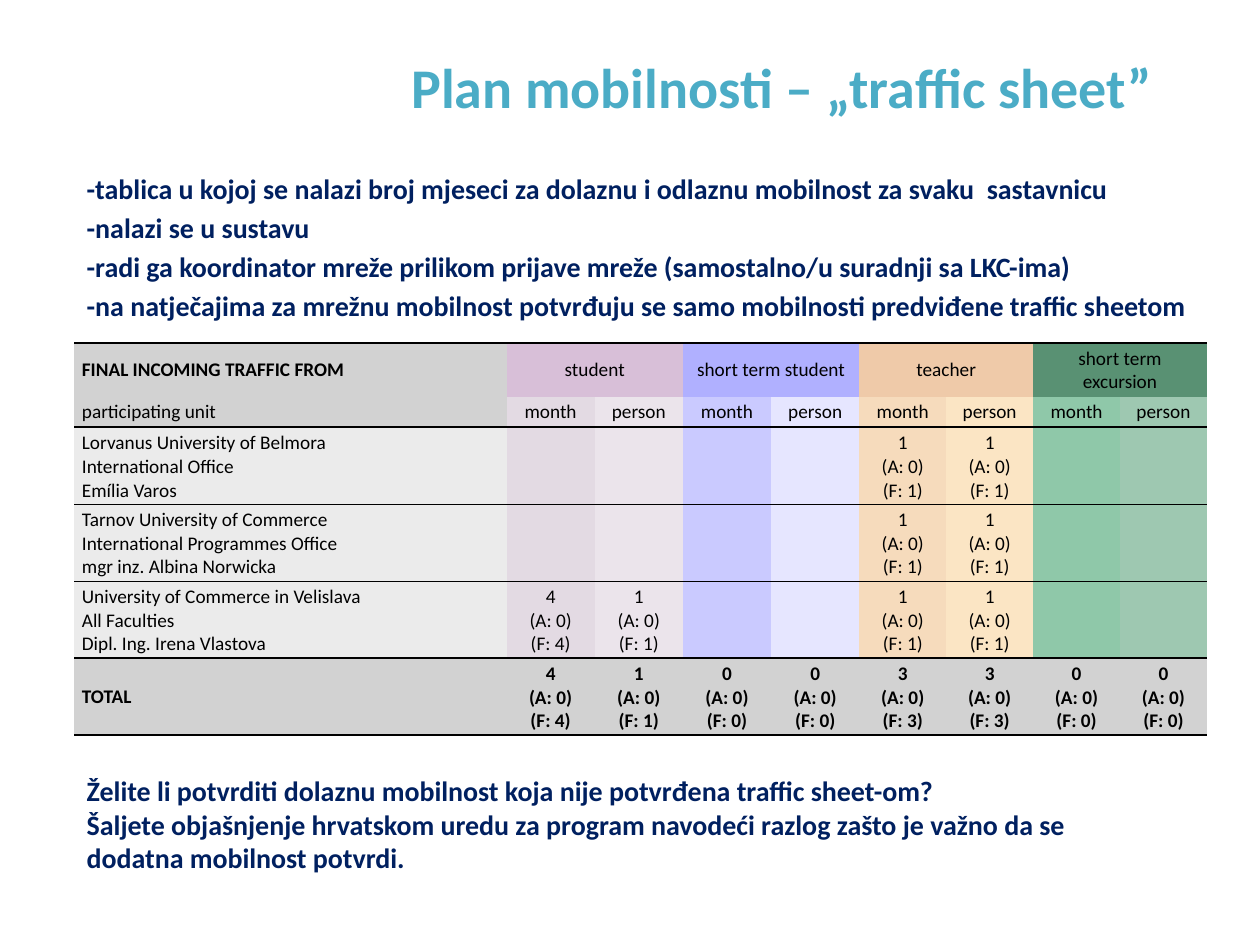
from lxml import etree
from pptx import Presentation
from pptx.dml.color import RGBColor
from pptx.enum import text
from pptx.oxml import ns
from pptx.util import Inches, Pt

FONT = "Calibri"
NAVY, TEAL, BLACK = "002060", "4BACC6", "000000"
GREY, LIGHT_GREY = "D2D2D2", "EBEBEB"
NO_STYLE = "{2D5ABB26-0587-4C30-8999-92F81FD0307C}"

INTRO = [
    "-tablica u kojoj se nalazi broj mjeseci za dolaznu i odlaznu mobilnost za svaku  sastavnicu",
    "-nalazi se u sustavu",
    "-radi ga koordinator mreže prilikom prijave mreže (samostalno/u suradnji sa LKC-ima)",
    "-na natječajima za mrežnu mobilnost potvrđuju se samo mobilnosti predviđene traffic sheetom",
]
CLOSING = [
    "Želite li potvrditi dolaznu mobilnost koja nije potvrđena traffic sheet-om?",
    "Šaljete objašnjenje hrvatskom uredu za program navodeći razlog zašto je važno "
    "da se dodatna mobilnost potvrdi.",
]

# Category, header colour, month colour, person colour
CATEGORIES = [
    ("student", "D8BFD8", "E3DAE3", "EBE4EB"),
    ("short term student", "B0B0FF", "CACAFF", "E6E6FF"),
    ("teacher", "EFCAA9", "F6DBBC", "FBE5C4"),
    ("short term excursion", "599173", "8FC8A9", "9EC8B1"),
]
# Unit lines, then month and person counts for each category (None is blank)
UNITS = [
    (["Lorvanus University of Belmora", "International Office", "Emília Varos"],
     [None, None, None, None, 1, 1, None, None]),
    (["Tarnov University of Commerce", "International Programmes Office",
      "mgr inz. Albina Norwicka"],
     [None, None, None, None, 1, 1, None, None]),
    (["University of Commerce in Velislava", "All Faculties",
      "Dipl. Ing. Irena Vlastova"],
     [4, 1, None, None, 1, 1, None, None]),
]
TOTALS = [4, 1, 0, 0, 3, 3, 0, 0]
COLUMN_WIDTHS = [3.43] + [0.7] * 4 + [0.69] * 4
ROW_HEIGHTS = [0.39, 0.23] + [0.56] * 4
RULE_WIDTHS = [1.5, None, 1.5, 0.75, 0.75, 1.5, 1.5]  # above each row, then below the last


def color(value):
    return RGBColor.from_string(value)


def add_run(paragraph, content, size, fill, bold=True):
    run = paragraph.add_run()
    run.text = content
    font = run.font
    font.name, font.size, font.bold = FONT, Pt(size), bold
    font.color.rgb = color(fill)


def add_title(slide, box):
    title = slide.shapes.title
    title.left, title.top, title.width, title.height = box
    frame = title.text_frame
    frame.vertical_anchor = text.MSO_ANCHOR.MIDDLE
    frame.margin_right = Inches(0.35)
    paragraph = frame.paragraphs[0]
    paragraph.alignment = text.PP_ALIGN.RIGHT
    add_run(paragraph, "Plan mobilnosti – „traffic sheet”", 32, TEAL)


def add_paragraphs(slide, box, lines, space_before=0):
    frame = slide.shapes.add_textbox(*box).text_frame
    frame.word_wrap = True
    for index, line in enumerate(lines):
        paragraph = frame.paragraphs[0] if index == 0 else frame.add_paragraph()
        paragraph.space_before = Pt(space_before)
        add_run(paragraph, line, 16, NAVY)


def add_rule(cell, tag, position, width):
    """Draw one horizontal cell border; borders come before the fill."""
    line = etree.Element(ns.qn(tag), w=str(Pt(width)))
    fill = etree.SubElement(line, ns.qn("a:solidFill"))
    etree.SubElement(fill, ns.qn("a:srgbClr"), val=BLACK)
    cell._tc.get_or_add_tcPr().insert(position, line)


def fill_cell(cell, lines, fill, bold=False, centered=True):
    cell.fill.solid()
    cell.fill.fore_color.rgb = color(fill)
    cell.vertical_anchor = text.MSO_ANCHOR.MIDDLE
    cell.margin_left = cell.margin_right = Inches(0.06)
    cell.margin_top = cell.margin_bottom = Inches(0.03)
    paragraph = cell.text_frame.paragraphs[0]
    paragraph.alignment = text.PP_ALIGN.CENTER if centered else text.PP_ALIGN.LEFT
    for index, line in enumerate(lines):
        if index:
            paragraph.add_line_break()
        add_run(paragraph, line, 11, BLACK, bold)


def count_lines(count):
    return [] if count is None else [str(count), "(A: 0)", f"(F: {count})"]


def add_traffic_table(slide, box):
    table = slide.shapes.add_table(len(ROW_HEIGHTS), len(COLUMN_WIDTHS), *box).table
    table.first_row = table.horz_banding = False
    table._tbl.tblPr.find(ns.qn("a:tableStyleId")).text = NO_STYLE
    for column, width in zip(table.columns, COLUMN_WIDTHS):
        column.width = Inches(width)
    for row, height in zip(table.rows, ROW_HEIGHTS):
        row.height = Inches(height)

    # Two header rows
    fill_cell(table.cell(0, 0), ["FINAL INCOMING TRAFFIC FROM"], GREY, True, False)
    fill_cell(table.cell(1, 0), ["participating unit"], GREY, centered=False)
    column_fills = []
    for index, (name, header, month, person) in enumerate(CATEGORIES):
        left = 1 + 2 * index
        table.cell(0, left).merge(table.cell(0, left + 1))
        fill_cell(table.cell(0, left), [name], header)
        fill_cell(table.cell(1, left), ["month"], month)
        fill_cell(table.cell(1, left + 1), ["person"], person)
        column_fills += [month, person]

    # Participating units
    for row, (unit, counts) in enumerate(UNITS, start=2):
        fill_cell(table.cell(row, 0), unit, LIGHT_GREY, centered=False)
        for column, (count, fill) in enumerate(zip(counts, column_fills), start=1):
            fill_cell(table.cell(row, column), count_lines(count), fill)

    # Totals
    last = len(ROW_HEIGHTS) - 1
    fill_cell(table.cell(last, 0), ["TOTAL"], GREY, True, False)
    for column, count in enumerate(TOTALS, start=1):
        fill_cell(table.cell(last, column), count_lines(count), GREY, True)

    # Horizontal rules
    for row in range(len(ROW_HEIGHTS)):
        edges = [("a:lnT", RULE_WIDTHS[row]), ("a:lnB", RULE_WIDTHS[row + 1])]
        edges = [edge for edge in edges if edge[1]]
        for column in range(len(COLUMN_WIDTHS)):
            for position, (tag, width) in enumerate(edges):
                add_rule(table.cell(row, column), tag, position, width)


def inches(*lengths):
    return [Inches(length) for length in lengths]


def main():
    presentation = Presentation()
    presentation.slide_width, presentation.slide_height = inches(10, 7.5)
    slide = presentation.slides.add_slide(presentation.slide_layouts[5])
    add_title(slide, inches(0.5, 0.3, 9, 0.77))
    add_paragraphs(slide, inches(0.59, 1.31, 9, 1.35), INTRO, space_before=3.2)
    add_traffic_table(slide, inches(0.59, 2.72, 8.98, 3.13))
    add_paragraphs(slide, inches(0.59, 6.09, 8.74, 0.92), CLOSING)
    presentation.save("out.pptx")


if __name__ == "__main__":
    main()
